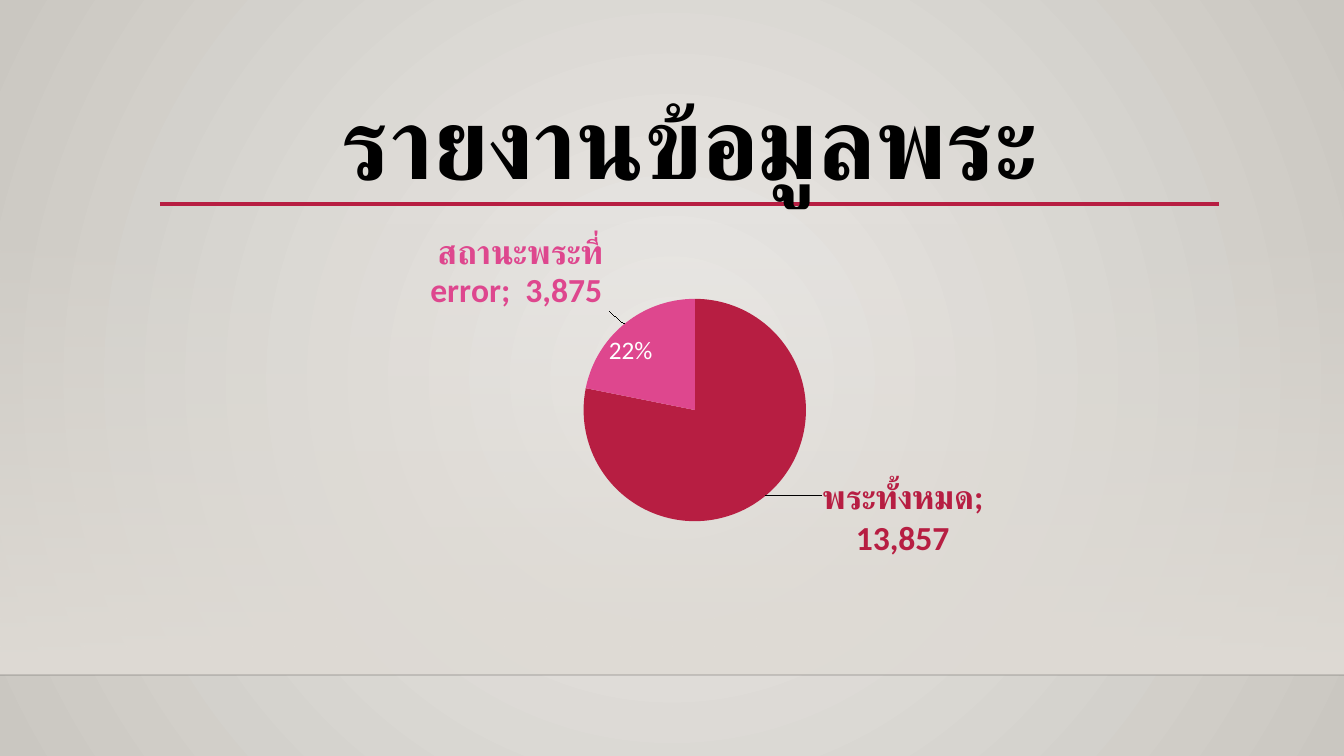
from lxml import etree
from pptx import Presentation
from pptx.chart.data import CategoryChartData
from pptx.dml.color import RGBColor
from pptx.enum.chart import XL_CHART_TYPE, XL_LABEL_POSITION
from pptx.enum.shapes import MSO_CONNECTOR, MSO_SHAPE
from pptx.enum.text import MSO_ANCHOR, PP_ALIGN
from pptx.oxml import parse_xml
from pptx.oxml.ns import nsdecls, qn
from pptx.util import Emu, Pt

PIE = XL_CHART_TYPE.PIE
OUTER = XL_LABEL_POSITION.OUTSIDE_END
STRAIGHT = MSO_CONNECTOR.STRAIGHT
RECT = MSO_SHAPE.RECTANGLE
MIDDLE = MSO_ANCHOR.MIDDLE
CENTER = PP_ALIGN.CENTER

BLACK = RGBColor(0, 0, 0)
WHITE = RGBColor(0xFF, 0xFF, 0xFF)
LIGHT = RGBColor(0xEC, 0xEA, 0xE7)
DARK = RGBColor(0xCA, 0xC7, 0xC1)
SAND = RGBColor(0xDF, 0xDB, 0xD5)
RED = RGBColor(0xB7, 0x1E, 0x42)
PINK = RGBColor(0xDE, 0x47, 0x8E)

FACE = "Calibri"
WIDE, HIGH = 1344, 756
COUNT = '_(* #,##0_);_(* \\(#,##0\\);_(* "-"_);_(@_)'
# Name, value, colour, label shift as parts of the chart
PARTS = [
    ("พระทั้งหมด", 13857, RED, (0.05, -0.06)),
    ("สถานะพระที่ error", 3875, PINK, (-0.01, -0.02)),
]


def px(n):
    return Emu(round(n * 914400 * 10 / 1008))


def style(font, **look):
    color = look.pop("color", None)
    for key, value in {"name": FACE, **look}.items():
        setattr(font, key, value)
    if color is not None:
        font.color.rgb = color


def blend(fill, first, last):
    fill.gradient()
    for stop, color in zip(fill.gradient_stops, (first, last)):
        stop.color.rgb = color


def fade(color, part):
    """Give the colour element an opacity in percent."""
    etree.SubElement(color, qn("a:alpha")).set("val", str(part * 1000))


def rule(slide, x, y, width, color, weight):
    line = slide.shapes.add_connector(STRAIGHT, px(x), px(y), px(x + width), px(y))
    line.line.color.rgb = color
    line.line.width = Pt(weight)
    etree.SubElement(line._element.spPr, qn("a:effectLst"))
    return line


def backdrop(slide):
    # Round glow
    fill = slide.background.fill
    blend(fill, LIGHT, DARK)
    grad = next(slide.background._cSld.iter(qn("a:gradFill")))
    grad.replace(grad.find(qn("a:lin")), parse_xml(
        f'<a:path {nsdecls("a")} path="circle">'
        '<a:fillToRect l="50000" t="50000" r="50000" b="50000"/></a:path>'))

    # Wall that fades in towards the floor
    wall = slide.shapes.add_shape(RECT, 0, px(223), px(WIDE), px(452))
    wall.shadow.inherit = False
    wall.line.fill.background()
    blend(wall.fill, SAND, SAND)
    wall.fill.gradient_angle = 270
    fade(next(wall._element.spPr.iter(qn("a:srgbClr"))), 0)

    # Floor edge
    edge = rule(slide, 0, 675, WIDE, BLACK, 1)
    fade(next(edge._element.spPr.iter(qn("a:srgbClr"))), 20)


def heading(slide, x, y, width, height):
    rule(slide, x, y + height - 1, width, RED, 2.5)
    title = slide.shapes.title
    slide.shapes._spTree.append(title._element)
    title.left, title.top, title.width, title.height = map(px, (x, y, width, height))
    frame = title.text_frame
    frame.text = "รายงานข้อมูลพระ"
    frame.vertical_anchor = MIDDLE
    para = frame.paragraphs[0]
    para.alignment = CENTER
    para.line_spacing = 0.9
    style(para.runs[0].font, size=Pt(72), bold=True, color=BLACK)


def layout(**parts):
    items = "".join(f'<c:{key} val="{value}"/>' for key, value in parts.items())
    return parse_xml(f'<c:layout {nsdecls("c")}><c:manualLayout>{items}'
                     '</c:manualLayout></c:layout>')


def label(point, color, shift):
    tag = point.data_label
    style(tag.font, size=Pt(24), bold=True, color=color)
    tag.position = OUTER
    node = tag._dLbl
    node.find(qn("c:showCatName")).set("val", "1")
    node.insert(1, layout(x=shift[0], y=shift[1]))
    form = etree.Element(qn("c:numFmt"), formatCode=COUNT, sourceLinked="0")
    node.insert(2, form)
    etree.SubElement(node, qn("c:separator")).text = "; "


def pie(slide, x, y, width, height):
    data = CategoryChartData(number_format=COUNT)
    data.categories = [part[0] for part in PARTS]
    data.add_series("Series 1", [part[1] for part in PARTS])
    chart = slide.shapes.add_chart(
        PIE, px(x), px(y), px(width), px(height), data).chart
    chart.has_legend = chart.has_title = False
    style(chart.font, size=Pt(10), color=BLACK)
    plot = chart.plots[0]
    plot.vary_by_categories = True

    # Place of the disc
    area = chart._chartSpace.chart.plotArea
    for old in area.findall(qn("c:layout")):
        area.remove(old)
    area.insert(0, layout(layoutTarget="inner", xMode="edge", yMode="edge",
                          x=0.4, y=0.2, w=0.21, h=0.59))

    # Slices and labels
    series = plot.series[0]
    tags = series.data_labels
    tags.show_category_name = True
    tags.number_format = COUNT
    tags.number_format_is_linked = False
    tags.position = OUTER
    style(tags.font, size=Pt(24), bold=True, color=RED)
    for i, (_, _, color, shift) in enumerate(PARTS):
        point = series.points[i]
        point.format.fill.solid()
        point.format.fill.fore_color.rgb = color
        label(point, color, shift)


def share(slide, x, y, width, height):
    box = slide.shapes.add_textbox(px(x), px(y), px(width), px(height))
    frame = box.text_frame
    frame.word_wrap = True
    frame.text = "22%"
    style(frame.paragraphs[0].runs[0].font, size=Pt(18), color=WHITE)


def main():
    deck = Presentation()
    deck.slide_width, deck.slide_height = px(WIDE), px(HIGH)
    slide = deck.slides.add_slide(deck.slide_layouts[5])
    backdrop(slide)
    heading(slide, 160, 89, 1059, 116)
    pie(slide, 160, 222, 1059, 380)
    share(slide, 599, 329, 90, 41)
    deck.save("out.pptx")


if __name__ == "__main__":
    main()
